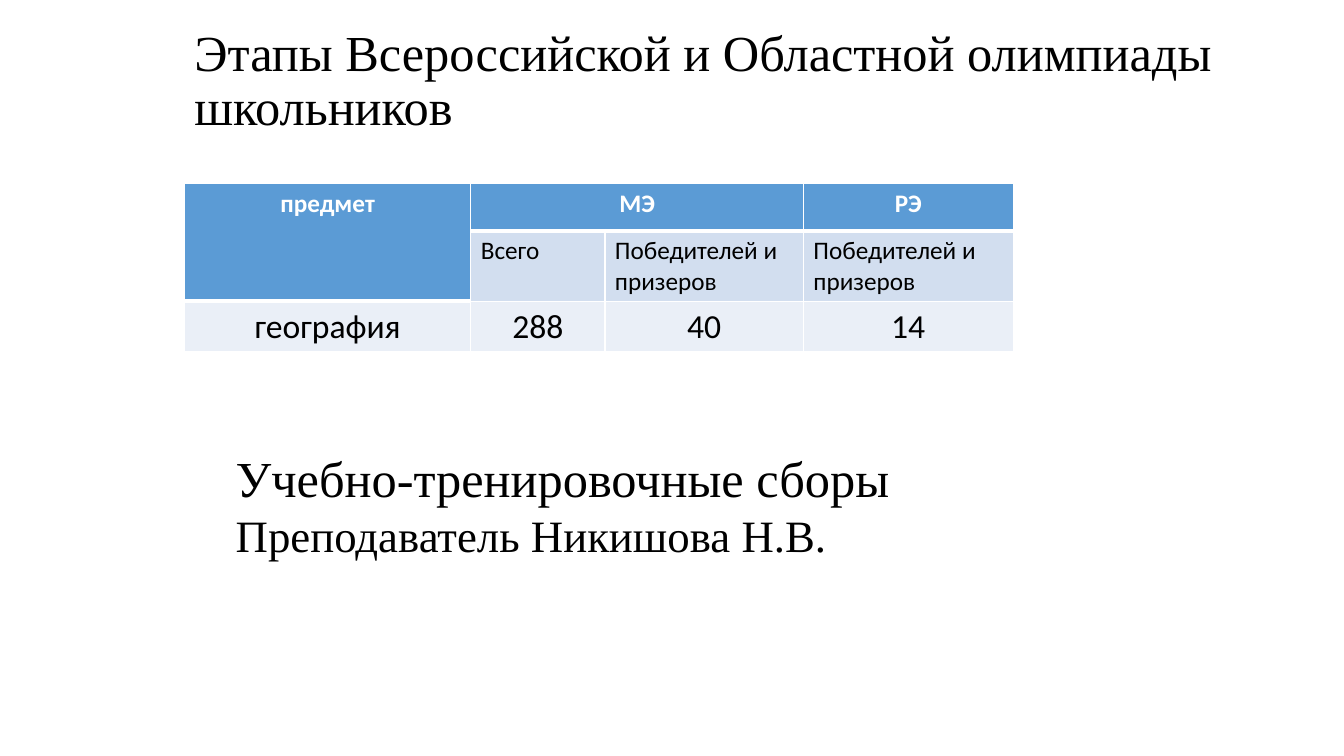
from lxml import etree
from pptx import Presentation
from pptx.dml.color import RGBColor
from pptx.enum.text import MSO_ANCHOR, PP_ALIGN
from pptx.oxml.ns import qn
from pptx.util import Pt

CENTER, LEFT = PP_ALIGN.CENTER, PP_ALIGN.LEFT
MIDDLE, TOP = MSO_ANCHOR.MIDDLE, MSO_ANCHOR.TOP

BLACK = RGBColor(0x00, 0x00, 0x00)
WHITE = RGBColor(0xFF, 0xFF, 0xFF)
BLUE = RGBColor(0x5B, 0x9B, 0xD5)
PALE_BLUE = RGBColor(0xD2, 0xDE, 0xEF)
PALEST_BLUE = RGBColor(0xEA, 0xEF, 0xF7)
SERIF, SANS = "Times New Roman", "Calibri"

# Content: text boxes as (bounds, anchor, line spacing, [(text, size)])
TEXT_BOXES = [
    ((131.8, 6.5, 800, 104.4), MIDDLE, 0.9,
     [("Этапы Всероссийской и Областной олимпиады школьников", 36)]),
    ((161.3, 316, 798.5, 90), TOP, 1.0,
     [("Учебно-тренировочные сборы", 36), ("Преподаватель Никишова Н.В.", 32)]),
]

# Content: results table
RESULTS = [
    ["предмет", "МЭ", "", "РЭ"],
    ["", "Всего", "Победителей и призеров", "Победителей и призеров"],
    ["география", "288", "40", "14"],
]
TABLE_LEFT, TABLE_TOP = 131.8, 131
COLUMN_WIDTHS = [204.5, 95.8, 141.8, 149.8]
ROW_HEIGHTS = [33.8, 50.4, 36]
MERGES = [((0, 0), (1, 0)), ((0, 1), (0, 2))]
# Row styles: fill, font colour, bold, size, alignment, bottom border
HEADER = (BLUE, WHITE, True, 18, CENTER, 3)
SUBHEADER = (PALE_BLUE, BLACK, False, 18, LEFT, 1)
BODY = (PALEST_BLUE, BLACK, False, 24, CENTER, 1)
ROW_STYLES = [HEADER, SUBHEADER, BODY]


def format_font(font, name, size, color, bold=False):
    font.name, font.size, font.bold = name, Pt(size), bold
    font.color.rgb = color


def add_text_box(page, bounds, anchor, spacing, lines):
    frame = page.shapes.add_textbox(*map(Pt, bounds)).text_frame
    frame.word_wrap = True
    frame.vertical_anchor = anchor
    frame.text = "\n".join(text for text, size in lines)
    for para, (text, size) in zip(frame.paragraphs, lines):
        para.line_spacing = spacing
        format_font(para.runs[0].font, SERIF, size, BLACK)


def set_borders(cell, bottom_width):
    properties = cell._tc.get_or_add_tcPr()
    for side, width in (("L", 1), ("R", 1), ("T", 1), ("B", bottom_width)):
        line = etree.SubElement(properties, qn("a:ln" + side), w=str(Pt(width)))
        fill = etree.SubElement(line, qn("a:solidFill"))
        etree.SubElement(fill, qn("a:srgbClr"), val=str(WHITE))


def style_cell(cell, text, style):
    fill, color, bold, size, alignment, bottom_width = style
    set_borders(cell, bottom_width)
    cell.fill.solid()
    cell.fill.fore_color.rgb = fill
    if text:
        cell.text = text
        para = cell.text_frame.paragraphs[0]
        para.alignment = alignment
        format_font(para.runs[0].font, SANS, size, color, bold)


def add_results_table(page):
    table = page.shapes.add_table(
        len(RESULTS), len(COLUMN_WIDTHS), Pt(TABLE_LEFT), Pt(TABLE_TOP),
        Pt(sum(COLUMN_WIDTHS)), Pt(sum(ROW_HEIGHTS))).table
    for column, width in zip(table.columns, COLUMN_WIDTHS):
        column.width = Pt(width)
    for row, height in zip(table.rows, ROW_HEIGHTS):
        row.height = Pt(height)
    for first, last in MERGES:
        table.cell(*first).merge(table.cell(*last))
    for r, (texts, row_style) in enumerate(zip(RESULTS, ROW_STYLES)):
        for c, text in enumerate(texts):
            cell = table.cell(r, c)
            # The subject heading spans both heading rows
            style_cell(cell, text, HEADER if cell.is_spanned else row_style)


def main():
    deck = Presentation()
    deck.slide_width, deck.slide_height = Pt(960), Pt(540)
    page = deck.slides.add_slide(deck.slide_layouts[6])
    title, training = TEXT_BOXES
    add_text_box(page, *title)
    add_results_table(page)
    add_text_box(page, *training)
    deck.save("out.pptx")


if __name__ == "__main__":
    main()
